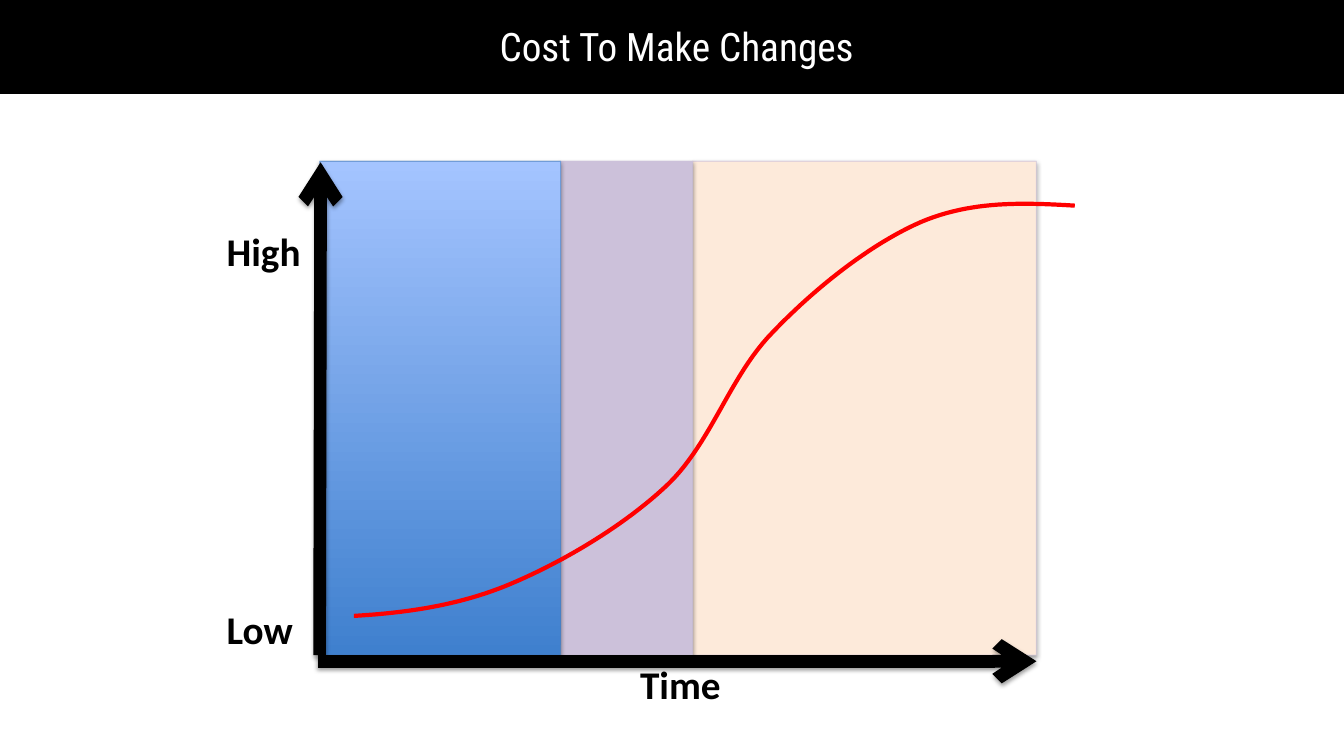
from lxml import etree
from pptx import Presentation
from pptx import util as u
from pptx.dml import color
from pptx.enum import shapes, text
from pptx.oxml import ns

PHASES = [
    (3.7, 3.41, "FDEADA", "CCC1DA"),
    (2.39, 1.31, "CCC1DA", "CCC1DA"),
    (0, 2.39, ("3F80CE", "A4C4FF"), "4B7EBC"),
]
COST_CURVE = [
    (0.34, 4.51), (0.85, 4.48), (1.38, 4.41), (1.9, 4.19),
    (2.42, 3.97), (3.03, 3.61), (3.46, 3.2),
    (3.89, 2.78), (4.07, 2.13), (4.49, 1.7),
    (4.9, 1.27), (5.46, 0.82), (5.97, 0.6),
    (6.47, 0.39), (6.98, 0.41), (7.49, 0.44),
]
CURVE_STEPS = 24


def rgb(value):
    return color.RGBColor.from_string(value)


def inches(*values):
    return [u.Inches(value) for value in values]


def add_child(parent, tag, **attributes):
    return etree.SubElement(parent, ns.qn(tag), attributes)


def set_line(item, value, width):
    item.line.color.rgb = rgb(value)
    item.line.width = u.Pt(width)


def add_shadow(effects, opacity, distance):
    shadow = add_child(effects, "a:outerShdw", blurRad=str(u.Pt(3.1)),
                       dist=str(u.Pt(distance)), dir="5400000",
                       rotWithShape="0")
    black = add_child(shadow, "a:srgbClr", val="000000")
    add_child(black, "a:alpha", val=str(opacity * 1000))


def add_rectangle(page, box, fill, line, width):
    rectangle = page.shapes.add_shape(shapes.MSO_SHAPE.RECTANGLE, *inches(*box))
    if isinstance(fill, tuple):
        rectangle.fill.gradient()
        rectangle.fill.gradient_angle = 90
        for stop, value in zip(rectangle.fill.gradient_stops, fill):
            stop.color.rgb = rgb(value)
    else:
        rectangle.fill.solid()
        rectangle.fill.fore_color.rgb = rgb(fill)
    set_line(rectangle, line, width)
    rectangle.shadow.inherit = False
    return rectangle


def add_label(page, box, words, font="Calibri", value="000000", bold=True,
              align=text.PP_ALIGN.LEFT):
    label = page.shapes.add_textbox(*inches(*box))
    frame = label.text_frame
    frame.word_wrap = True
    frame.auto_size = text.MSO_AUTO_SIZE.SHAPE_TO_FIT_TEXT
    para = frame.paragraphs[0]
    para.text = words
    para.alignment = align
    para.font.name = font
    para.font.size = u.Pt(28)
    para.font.bold = bold
    para.font.color.rgb = rgb(value)


def add_phase(page, box, fill, line):
    band = add_rectangle(page, box, fill, line, 0.75)
    line_color = band.line._ln.find(".//" + ns.qn("a:srgbClr"))
    add_child(line_color, "a:alpha", val="57000")
    add_shadow(band._element.spPr.find(ns.qn("a:effectLst")), 35, 1.8)


def add_axis(page, start, end):
    axis = page.shapes.add_connector(shapes.MSO_CONNECTOR.STRAIGHT,
                                     *inches(*start, *end))
    set_line(axis, "000000", 9)
    add_child(axis.line._ln, "a:tailEnd", type="arrow")
    add_shadow(add_child(axis._element.spPr, "a:effectLst"), 38, 1.6)


def bezier(points, t):
    weights = ((1 - t) ** 3, 3 * t * (1 - t) ** 2, 3 * t ** 2 * (1 - t), t ** 3)
    return [sum(w * point[axis] for w, point in zip(weights, points))
            for axis in (0, 1)]


def add_curve(page, left, top):
    knots = [(left + x, top + y) for x, y in COST_CURVE]
    points = [inches(*bezier(knots[first:first + 4], step / CURVE_STEPS))
              for first in range(0, len(knots) - 1, 3)
              for step in range(1, CURVE_STEPS + 1)]
    builder = page.shapes.build_freeform(*inches(*knots[0]))
    builder.add_line_segments(points, close=False)
    curve = builder.convert_to_shape()
    curve.fill.background()
    set_line(curve, "FF0000", 3)
    curve.shadow.inherit = False


def add_header(page, box):
    left, top, width, height = box
    add_rectangle(page, box, "000000", "000000", 2)
    add_label(page, (left + 1.94, top + 0.17, 9.54, 0.57),
              "Cost To Make Changes", "Roboto Condensed", "FFFFFF", False,
              text.PP_ALIGN.CENTER)


def add_cost_plot(page, box):
    left, top, width, height = box
    bottom = top + height
    for offset, band_width, fill, line in PHASES:
        add_phase(page, (left + offset, top, band_width, height), fill, line)
    add_label(page, (left + 3.08, bottom, 1.48, 0.57), "Time")
    for words, offset in (("High", 0.61), ("Low", 4.36)):
        add_label(page, (left - 1.02, top + offset, 0.96, 0.57), words)
    add_curve(page, left, top)
    add_axis(page, (left, bottom), (left + 0.01, top + 0.01))
    add_axis(page, (left - 0.02, bottom + 0.06), (left + width, bottom + 0.06))


def main():
    deck = Presentation()
    deck.slide_width, deck.slide_height = inches(13.33, 7.5)
    page = deck.slides.add_slide(deck.slide_layouts[6])
    add_cost_plot(page, (3.17, 1.6, 7.11, 4.9))
    add_header(page, (0, 0, 13.33, 0.92))
    deck.save("out.pptx")


if __name__ == "__main__":
    main()
